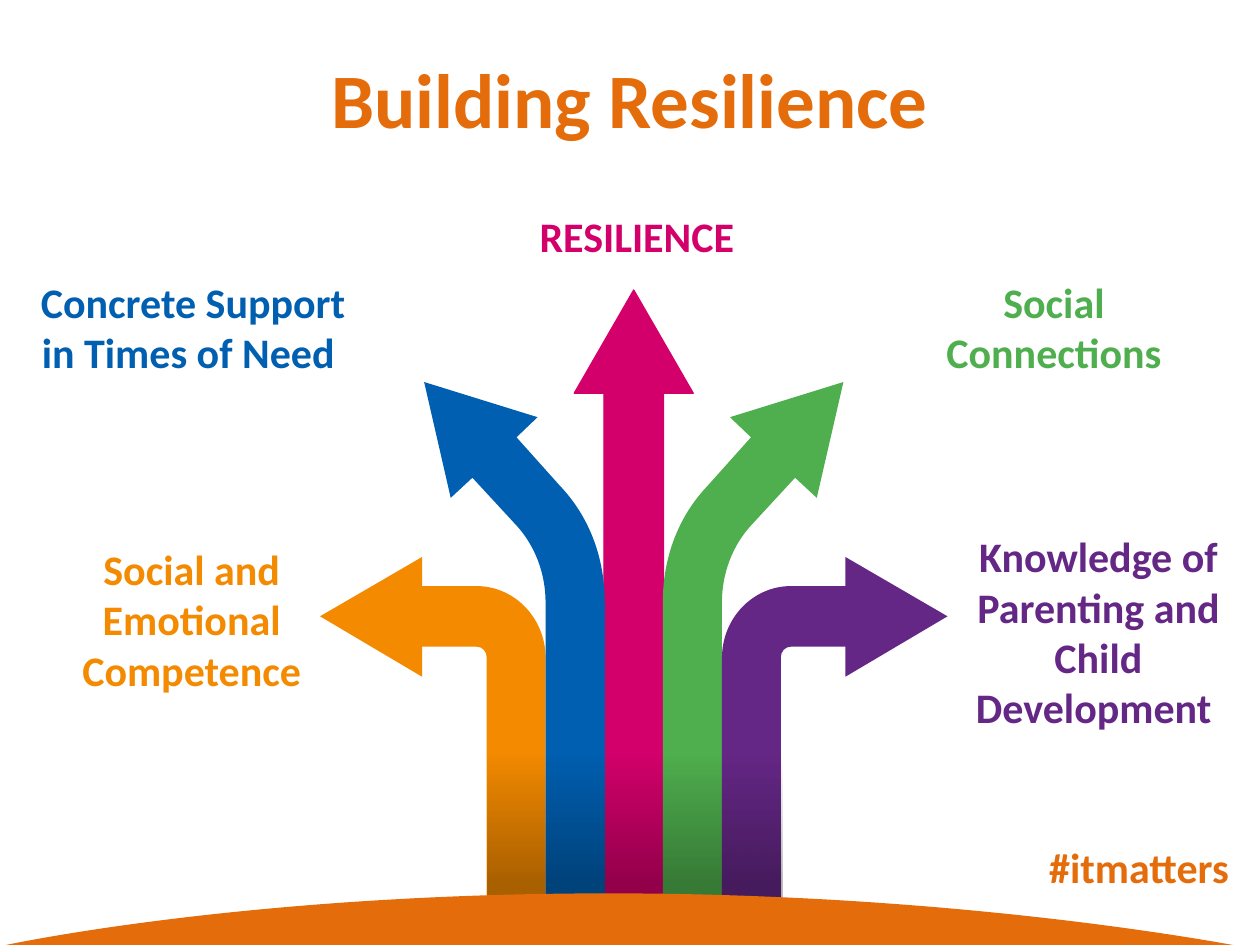
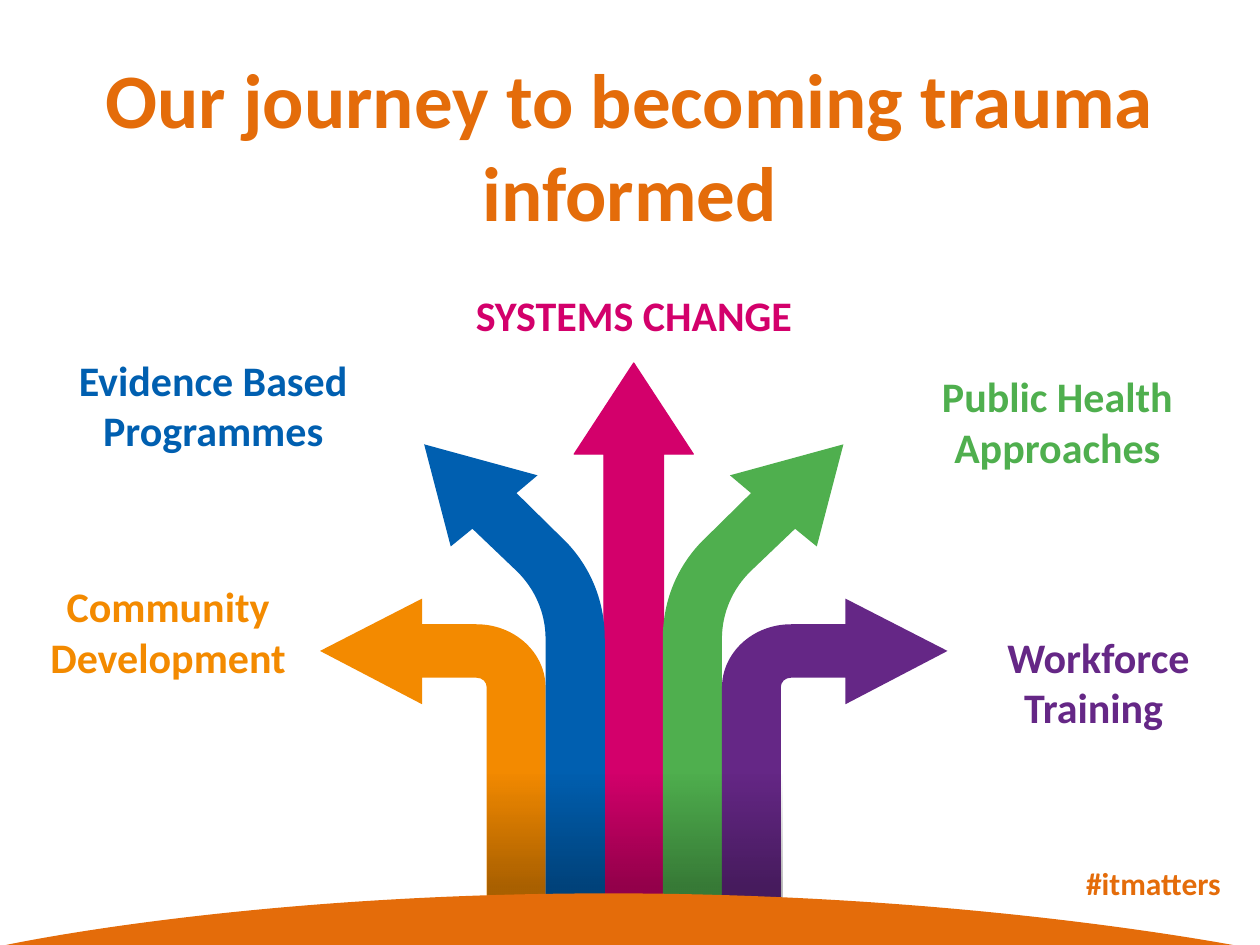
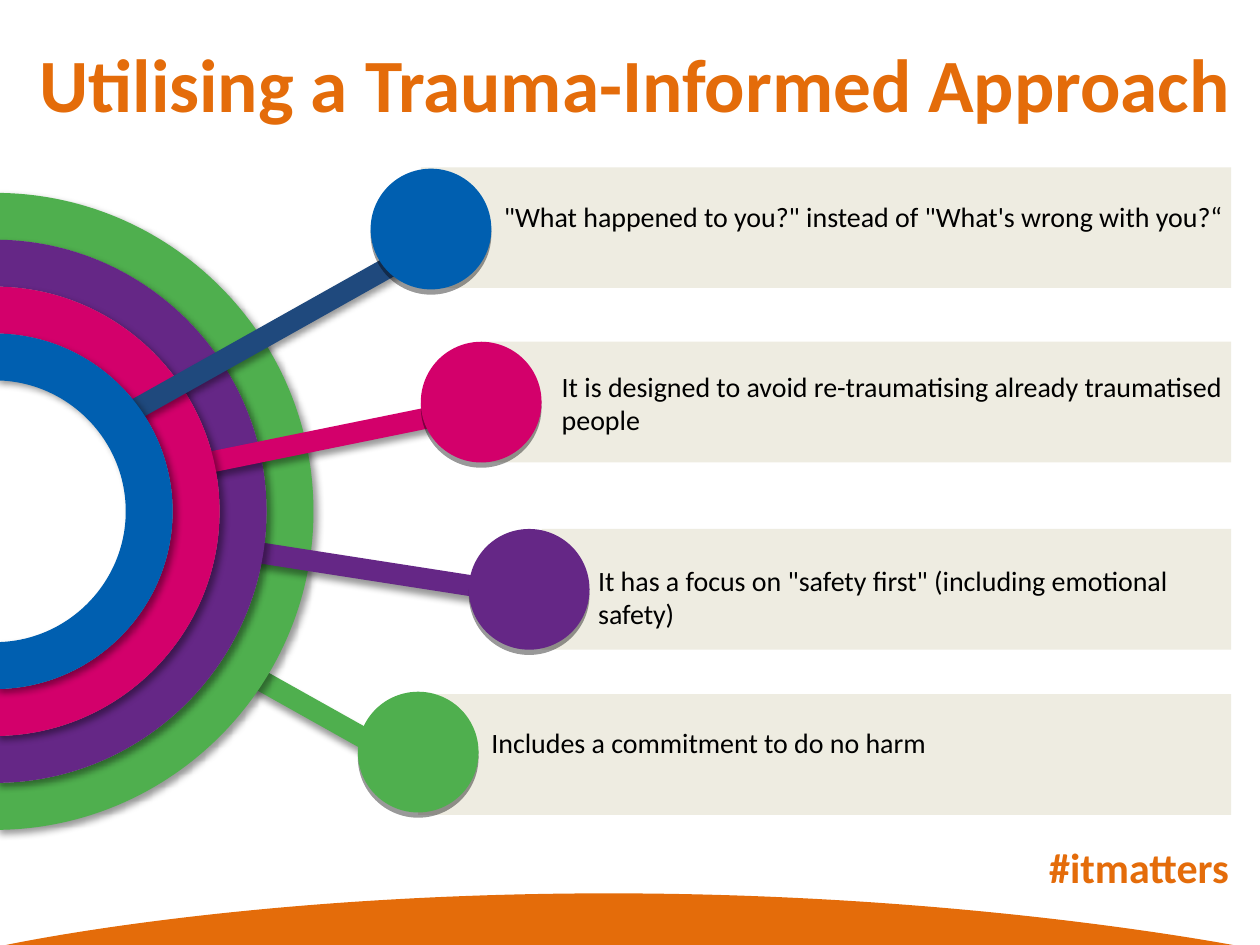
from typing import NamedTuple

from lxml.etree import SubElement
from pptx import Presentation
from pptx.dml.color import RGBColor
from pptx.enum.shapes import MSO_CONNECTOR, MSO_SHAPE
from pptx.enum.text import MSO_ANCHOR, MSO_AUTO_SIZE, PP_ALIGN
from pptx.oxml.ns import qn
from pptx.oxml.xmlchemy import OxmlElement
from pptx.util import Pt

COLORS = {
    "brand": "E46C0A",
    "magenta": "D3006B",
    "orange": "F38A00",
    "green": "4FAF4E",
    "purple": "652786",
    "blue": "005FB0",
    "navy": "1F497D",
    "bar": "EEECE1",
    "black": "000000",
}

FONT = "Calibri"
SLIDE_WIDTH, SLIDE_HEIGHT = 720, 540
TREE_HEIGHT = 353.5
CIRCLE_SIZE = 69
ROUNDNESS = 0.55


class Box(NamedTuple):
    left: float
    top: float
    width: float
    height: float

    def lengths(self):
        return [Pt(value) for value in self]


TITLE_BOX = Box(0, 26.2, SLIDE_WIDTH, 60.5)
HASHTAG_BOX = Box(592.5, 477.5, 119, 36)

HILL = [(0, 540.7), ((0, 540.7), (138, 510), (353, 510.5)),
        ((567, 511), (720, 542.9), (720, 542.9))]
TRUNK = [(0, 0), (-34, 59), (-17, 59), (-17, TREE_HEIGHT),
         (17, TREE_HEIGHT), (17, 59), (34, 59)]
INNER_ARROW = [
    (119.8, 52.6), (55, 72.7), (67, 84.2), (42.5, 111.6),
    ((25.2, 129.6), (16.6, 153.4), (16.6, 178.6)),
    (16.6, TREE_HEIGHT), (50.4, TREE_HEIGHT), (50.4, 178.6),
    ((50.4, 162), (56.4, 146.2), (67, 134.6)),
    (92.2, 107.3), (104.6, 118.8),
]
OUTER_ARROW = [
    (179.3, 186.5), (121, 152.6), (121, 169.2), (90, 169.2),
    ((67.7, 169.2), (50.4, 188), (50.4, 210.2)),
    (50.4, TREE_HEIGHT), (84, TREE_HEIGHT), (84, 210.2),
    ((84, 206.6), (86.4, 203.8), (90, 203.8)),
    (121, 203.8), (121, 221),
]
SHADE = [(-83.5, 265.7), (85, 265.7), (85, TREE_HEIGHT), (-83.5, TREE_HEIGHT)]
ARROWS = [
    ("magenta", TRUNK, 1),
    ("orange", OUTER_ARROW, -1),
    ("green", INNER_ARROW, 1),
    ("purple", OUTER_ARROW, 1),
    ("blue", INNER_ARROW, -1),
]


class Spoke(NamedTuple):
    color: str
    line_color: str
    bar: tuple
    circle: tuple
    start: tuple
    end: tuple
    text_box: Box
    lines: list


SPOKES = [
    Spoke("blue", "navy", (240.5, -0.4), (211.8, 0.4), (68.4, 143), (252, 40),
          Box(288, 14.2, 452, 48),
          ['"What happened to you?" instead of "What\'s wrong with you?“']),
    Spoke("magenta", "magenta", (275, 99.3), (240.5, 99.3), (112.3, 169.7),
          (296.6, 132.2), Box(321, 111.5, 414, 67.5),
          ["It is designed to avoid re-traumatising already traumatised people"]),
    Spoke("purple", "purple", (309.5, 206.3), (267.9, 206.3), (131, 217.2),
          (297.4, 243.1), Box(341.8, 222.4, 432.5, 67.5),
          ['It has a focus on "safety first" (including emotional', "safety)"]),
    Spoke("green", "green", (239, 300.7), (204.5, 299.3), (131, 282.7),
          (250.6, 349.7), Box(280.8, 315.3, 443.5, 48),
          ["Includes a commitment to do no harm"]),
]
BAR_ORDER = [2, 1, 3, 0]


def rgb(color):
    return RGBColor.from_string(COLORS[color])


def apply(target, values):
    for name, value in values.items():
        setattr(target, name, value)


def fill_shape(shape, color):
    shape.fill.solid()
    shape.fill.fore_color.rgb = rgb(color)
    shape.line.fill.background()
    shape.shadow.inherit = False


def set_alpha(color_element, percent):
    SubElement(color_element, qn("a:alpha"), val=str(percent * 1000))


def cast_shadow(shape, blur, angle):
    properties = shape.element.spPr
    effects = properties.find(qn("a:effectLst"))
    if effects is None:
        effects = SubElement(properties, qn("a:effectLst"))
    shadow = SubElement(effects, qn("a:outerShdw"), blurRad=str(Pt(blur)),
                        dist=str(Pt(3)), dir=str(angle * 60000), rotWithShape="0")
    set_alpha(SubElement(shadow, qn("a:srgbClr"), val=COLORS["black"]), 40)


def add_text(page, box, lines, size, color, bold=True, align=PP_ALIGN.CENTER,
             anchor=MSO_ANCHOR.TOP, side_inset=0, wrap=True):
    frame = page.shapes.add_textbox(*box.lengths()).text_frame
    apply(frame, {"word_wrap": wrap, "vertical_anchor": anchor,
                  "auto_size": MSO_AUTO_SIZE.SHAPE_TO_FIT_TEXT,
                  "margin_left": Pt(side_inset), "margin_right": Pt(side_inset)})
    for index, line in enumerate(lines):
        para = frame.add_paragraph() if index else frame.paragraphs[0]
        para.alignment = align
        span = para.add_run()
        span.text = line
        apply(span.font, {"name": FONT, "size": Pt(size), "bold": bold})
        span.font.color.rgb = rgb(color)


def is_curve(piece):
    return len(piece) == 3


def move_outline(outline, place):
    return [tuple(place(*point) for point in piece) if is_curve(piece)
            else place(*piece) for piece in outline]


def add_outline(page, outline, color):
    corners = []
    for piece in outline:
        points = piece if is_curve(piece) else [piece]
        corners.extend((Pt(x), Pt(y)) for x, y in points)
    builder = page.shapes.build_freeform(*corners[0])
    builder.add_line_segments(corners[1:], close=True)
    shape = builder.convert_to_shape()
    segments = iter(list(shape.element.spPr.iter(qn("a:lnTo"))))
    for piece in outline[1:]:
        segment = next(segments)
        if is_curve(piece):
            curve = OxmlElement("a:cubicBezTo")
            segment.addprevious(curve)
            for part in (segment, next(segments), next(segments)):
                curve.append(part[0])
                part.getparent().remove(part)
    fill_shape(shape, color)
    return shape


def add_title(page, text, box=TITLE_BOX, size=44):
    add_text(page, box, [text], size, "brand", side_inset=7.2)


def add_hashtag(page, box=HASHTAG_BOX, size=24):
    add_text(page, box, ["#itmatters"], size, "brand", align=PP_ALIGN.LEFT,
             side_inset=7.2, wrap=False)


def add_hill(page):
    add_outline(page, HILL, "brand")


def add_arrow_tree(page, box):
    centre = box.left + box.width / 2
    stretch = box.height / TREE_HEIGHT

    def draw(outline, color, side=1):
        placed = move_outline(
            outline, lambda x, y: (centre + side * x, box.top + y * stretch))
        return add_outline(page, placed, color)

    for color, outline, side in ARROWS:
        arrow = draw(outline, color, side)
        if outline is TRUNK:
            arrow.line.color.rgb = rgb(color)
            arrow.line.width = Pt(0.75)

    shade = draw(SHADE, "black")
    shade.fill.gradient()
    shade.fill.gradient_angle = 90
    for stop, position in zip(shade.fill.gradient_stops, (0.17, 1)):
        stop.color.rgb = rgb("black")
        stop.position = position
    for color_element, alpha in zip(shade.element.spPr.iter(qn("a:srgbClr")), (30, 0)):
        set_alpha(color_element, alpha)


def add_tree_page(deck, title, tree_box, labels, title_box=TITLE_BOX,
                  hashtag_box=HASHTAG_BOX, hashtag_size=24):
    page = deck.slides.add_slide(deck.slide_layouts[6])
    add_title(page, title, title_box)
    add_arrow_tree(page, tree_box)
    add_hill(page)
    for color, text, box in labels:
        add_text(page, box, [text], 24, color, anchor=MSO_ANCHOR.BOTTOM)
    add_hashtag(page, hashtag_box, hashtag_size)


def half_ring(outer, inner):
    reach, bend = outer * ROUNDNESS, inner * ROUNDNESS
    return [
        (0, -outer),
        ((reach, -outer), (outer, -reach), (outer, 0)),
        ((outer, reach), (reach, outer), (0, outer)),
        (0, inner),
        ((bend, inner), (inner, bend), (inner, 0)),
        ((inner, -bend), (bend, -inner), (0, -inner)),
    ]


def add_ring_fan(page, box):
    ring_step, inner_radius = 26.8, 74.8

    def at(point):
        return box.left + point[0], box.top + point[1]

    for index in BAR_ORDER:
        left, top = at(SPOKES[index].bar)
        bar_box = Box(left, top, box.left + box.width - left, CIRCLE_SIZE)
        bar = page.shapes.add_shape(MSO_SHAPE.RECTANGLE, *bar_box.lengths())
        fill_shape(bar, "bar")

    for index, spoke in reversed(list(enumerate(SPOKES))):
        ends = [Pt(value) for value in at(spoke.start) + at(spoke.end)]
        line = page.shapes.add_connector(MSO_CONNECTOR.STRAIGHT, *ends)
        line.line.color.rgb = rgb(spoke.line_color)
        line.line.width = Pt(12)
        cast_shadow(line, 4, 90)

        circle_box = Box(*at(spoke.circle), CIRCLE_SIZE, CIRCLE_SIZE)
        circle = page.shapes.add_shape(MSO_SHAPE.OVAL, *circle_box.lengths())
        fill_shape(circle, spoke.color)
        cast_shadow(circle, 0, 90)

        inner = inner_radius + index * ring_step
        ring = move_outline(half_ring(inner + ring_step, inner),
                            lambda x, y: at((x - 2.9, y + 196.2)))
        cast_shadow(add_outline(page, ring, spoke.color), 4, 45)

    for spoke in SPOKES:
        text_box = Box(*at(spoke.text_box[:2]), *spoke.text_box[2:])
        add_text(page, text_box, spoke.lines, 16, "black", bold=False,
                 align=PP_ALIGN.LEFT)


def add_fan_page(deck, title):
    page = deck.slides.add_slide(deck.slide_layouts[6])
    add_hashtag(page)
    add_hill(page)
    add_title(page, title, Box(0, 18, 725.5, 60.5), 43)
    add_ring_fan(page, Box(0, 96, 703.6, 378))


def main():
    deck = Presentation()
    apply(deck, {"slide_width": Pt(SLIDE_WIDTH), "slide_height": Pt(SLIDE_HEIGHT)})
    add_tree_page(deck, "Building Resilience", Box(182.9, 165.7, 358.5, TREE_HEIGHT), [
        ("green", "Social Connections", Box(515.5, 153.5, 173.5, 65.5)),
        ("purple", "Knowledge of Parenting and Child Development ",
         Box(555.7, 298, 144, 124)),
        ("blue", "Concrete Support in Times of Need ", Box(13.8, 153.5, 193, 65.5)),
        ("orange", "Social and Emotional Competence", Box(24.3, 306, 170.5, 94.5)),
        ("magenta", "RESILIENCE", Box(277.2, 116.9, 173.5, 36)),
    ])
    add_tree_page(deck, "Our journey to becoming trauma informed",
                  Box(182.9, 207.5, 358.5, 311.8), [
        ("green", "Public Health Approaches", Box(517.5, 207.5, 173.5, 65.5)),
        ("purple", "Workforce Training ", Box(555.7, 356.5, 144, 65.5)),
        ("blue", "Evidence Based Programmes", Box(25.3, 198, 193, 65.5)),
        ("orange", "Community Development", Box(10.8, 327.5, 170.5, 65.5)),
        ("magenta", "SYSTEMS CHANGE", Box(255, 162, 214.5, 36)),
    ], Box(0, 26.2, SLIDE_WIDTH, 114), Box(613.5, 490.2, 93, 29), 18)
    add_fan_page(deck, "Utilising a Trauma-Informed Approach")
    deck.save("out.pptx")


if __name__ == "__main__":
    main()
